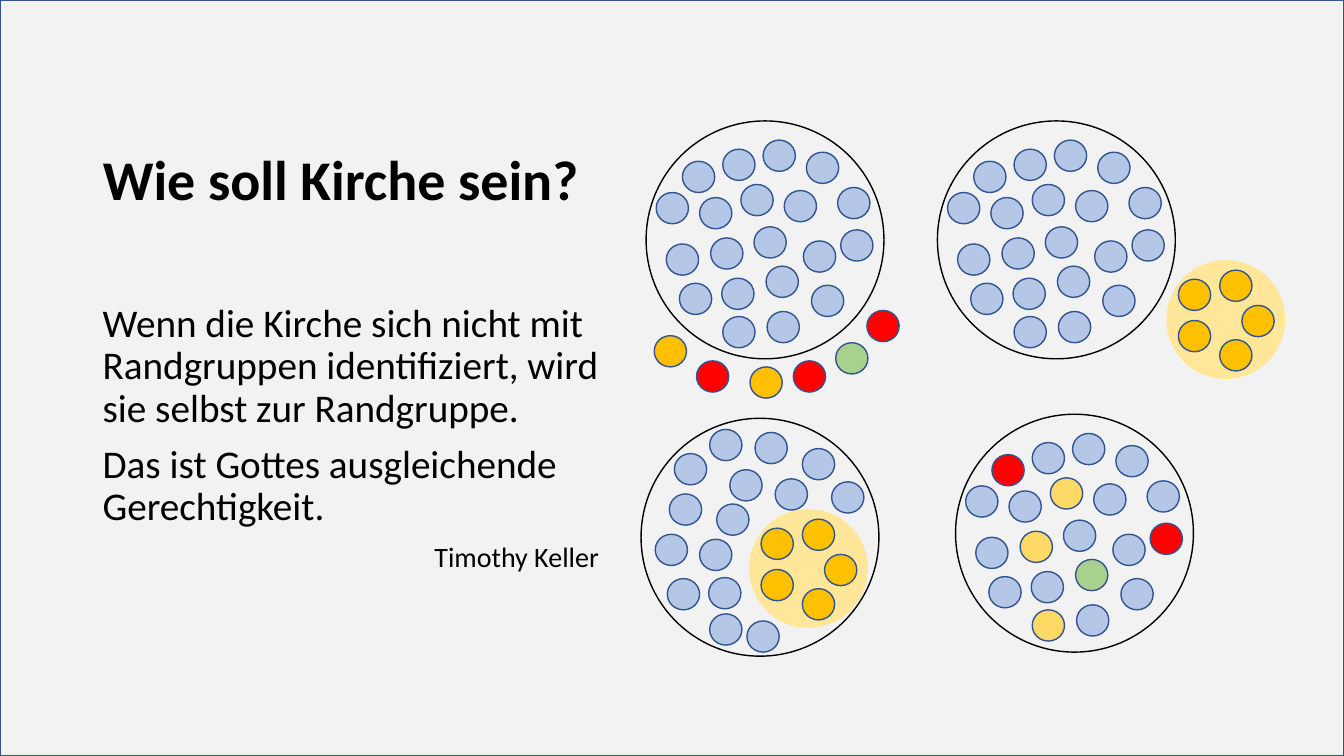
from dataclasses import dataclass
from pptx import Presentation
from pptx.dml.color import RGBColor
from pptx.enum.shapes import MSO_SHAPE
from pptx.enum.text import MSO_ANCHOR, MSO_AUTO_SIZE, PP_ALIGN
from pptx.util import Inches, Pt


@dataclass(frozen=True)
class Theme:
    font: str = "Calibri"
    text: str = "000000"
    paper: str = "F2F2F2"
    outline: str = "325491"
    member: str = "B4C7E7"
    red: str = "FF0000"
    gold: str = "FFC000"
    yellow: str = "FFD966"
    green: str = "A9D18E"
    halo: str = "FFE699"
    title_size: int = 40
    body_size: int = 28
    source_size: int = 20
    line_width: int = 1


THEME = Theme()
CELL = Inches(0.1)
COLUMNS, ROWS = 133.33, 75
RING, HALO = 23.6, 11.8
DOT_WIDTH, DOT_HEIGHT = 3.2, 3.1

CROWD = [
    (5.3, 7.6), (3.6, 4), (7.6, 2.8), (1, 7.1), (9.4, 6.3),
    (6.4, 11.6), (7.5, 15.6), (3.3, 16.1), (10.7, 10.5), (2, 12.2),
    (13.7, 6.9), (15.9, 3.1), (19, 6.6), (11.6, 1.9), (19.3, 10.8),
    (12, 18.9), (11.9, 14.4), (15.6, 11.9), (7.6, 19.4), (16.4, 16.3),
]
CROWD_MAKING_ROOM = [
    (7.5, 8.5), (3.3, 3.5), (6.8, 1.1), (2.8, 7.5), (8.8, 5.1),
    (5.8, 12), (6.7, 15.8), (2.6, 15.9), (1.4, 11.5), (13.3, 6),
    (16, 3), (18.9, 6.3), (11.3, 1.4), (10.5, 20.1), (6.8, 19.4),
]
SUBGROUP = [(1.2, 1.9), (7.5, 4.5), (1.2, 6), (5.3, 1), (5.3, 7.9)]
FRINGE = [(0.8, 21.3), (10.3, 24.4), (5, 23.8), (21.9, 18.8), (18.8, 22), (14.6, 23.8)]
FRINGE_COLORS = [THEME.gold, THEME.gold, THEME.red, THEME.red, THEME.green, THEME.red]
MIXED_COLORS = {1: THEME.red, 4: THEME.yellow, 5: THEME.yellow,
                14: THEME.red, 16: THEME.green, 18: THEME.yellow}


def cells(*values):
    return [round(v * CELL) for v in values]


def add_figure(shapes, kind, box, fill=None, line=None):
    sp = shapes.add_shape(kind, *cells(*box))
    sp.shadow.inherit = False
    if fill:
        sp.fill.solid()
        sp.fill.fore_color.rgb = RGBColor.from_string(fill)
    else:
        sp.fill.background()
    if line:
        sp.line.color.rgb = RGBColor.from_string(line)
        sp.line.width = Pt(THEME.line_width)
    else:
        sp.line.fill.background()
    return sp


def add_people(shapes, origin, places, colors):
    for (x, y), color in zip(places, colors):
        box = (origin[0] + x, origin[1] + y, DOT_WIDTH, DOT_HEIGHT)
        add_figure(shapes, MSO_SHAPE.OVAL, box, color, THEME.outline)


def add_church(shapes, origin, places, recolored=None):
    colors = [(recolored or {}).get(i, THEME.member) for i in range(len(places))]
    add_people(shapes, origin, places, colors)
    add_figure(shapes, MSO_SHAPE.OVAL, (*origin, RING, RING), line=THEME.text)


def add_subgroup(shapes, origin):
    add_figure(shapes, MSO_SHAPE.OVAL, (*origin, HALO, HALO), THEME.halo)
    add_people(shapes, origin, SUBGROUP, [THEME.gold] * len(SUBGROUP))


def place_text(sp, box, anchor):
    sp.left, sp.top, sp.width, sp.height = cells(*box)
    tf = sp.text_frame
    tf.word_wrap = True
    tf.auto_size = MSO_AUTO_SIZE.NONE
    tf.vertical_anchor = anchor
    return tf


def write(p, text, size, bold=False, align=PP_ALIGN.LEFT, before=0):
    p.alignment = align
    p.line_spacing = 0.9
    p.space_before = Pt(before)
    r = p.add_run()
    r.text = text
    r.font.name = THEME.font
    r.font.size = Pt(size)
    r.font.bold = bold
    r.font.color.rgb = RGBColor.from_string(THEME.text)


def main():
    prs = Presentation()
    prs.slide_width, prs.slide_height = cells(COLUMNS, ROWS)
    s = prs.slides.add_slide(prs.slide_layouts[5])
    title = s.shapes.title

    paper = add_figure(s.shapes, MSO_SHAPE.RECTANGLE, (0, 0, COLUMNS, ROWS),
                       THEME.paper, THEME.outline)
    title.element.addprevious(paper.element)

    tf = place_text(title, (9.2, 14.4, 49.3, 7.2), MSO_ANCHOR.BOTTOM)
    write(tf.paragraphs[0], "Wie soll Kirche sein?", THEME.title_size, bold=True)

    quote = s.shapes.add_textbox(0, 0, CELL, CELL)
    tf = place_text(quote, (9.2, 22.8, 51.2, 41.4), MSO_ANCHOR.MIDDLE)
    write(tf.paragraphs[0], "Wenn die Kirche sich nicht mit Randgruppen identifiziert, "
          "wird sie selbst zur Randgruppe.", THEME.body_size)
    write(tf.add_paragraph(), "Das ist Gottes ausgleichende Gerechtigkeit.",
          THEME.body_size, before=10)
    write(tf.add_paragraph(), "Timothy Keller", THEME.source_size,
          align=PP_ALIGN.RIGHT, before=10)

    mixed = s.shapes.add_group_shape().shapes
    add_church(mixed, (94.8, 41.1), CROWD, MIXED_COLORS)

    enclosing = s.shapes.add_group_shape().shapes
    add_subgroup(enclosing, (74.3, 50.5))
    add_church(enclosing, (63.6, 41.5), CROWD_MAKING_ROOM)

    excluding = s.shapes.add_group_shape().shapes
    add_church(excluding, (64.1, 12), CROWD)
    add_people(excluding, (64.1, 12), FRINGE, FRINGE_COLORS)

    separate = s.shapes.add_group_shape().shapes
    add_church(separate, (93, 12), CROWD)
    add_subgroup(separate, (115.7, 25.8))

    prs.save("out.pptx")


if __name__ == "__main__":
    main()
